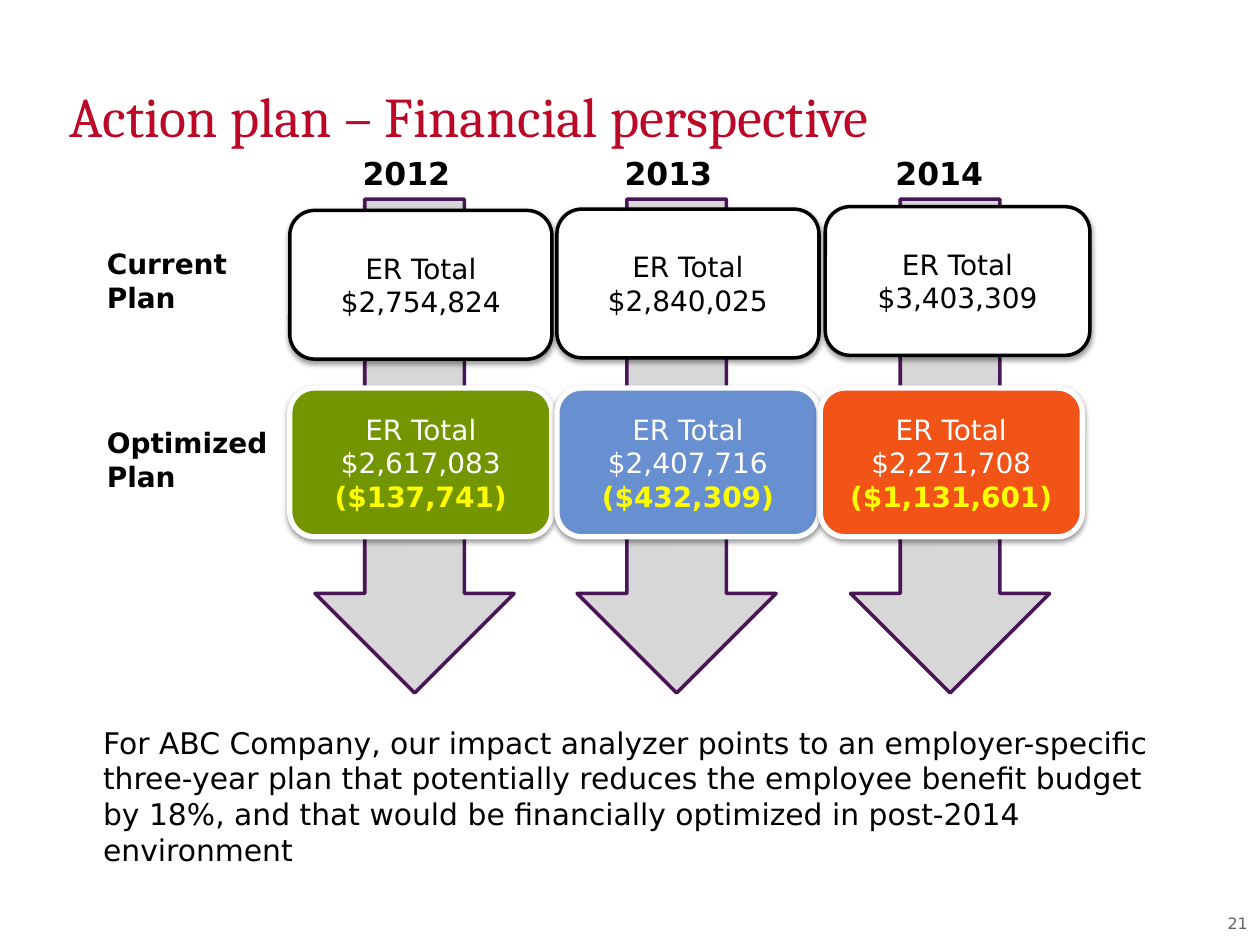
from dataclasses import dataclass

from lxml import etree
from pptx import Presentation
from pptx import util as u
from pptx.dml.color import RGBColor
from pptx.enum import shapes, text
from pptx.oxml.ns import qn


@dataclass(frozen=True)
class Theme:
    """Colours, fonts and type sizes of the deck."""
    heading_font: str = "Cambria"
    body_font: str = "DejaVu Sans"
    heading: str = "BB0826"
    ink: str = "000000"
    paper: str = "FFFFFF"
    saving: str = "FFFF00"
    muted: str = "626366"
    arrow: str = "D7D7D7"
    arrow_edge: str = "491557"
    title_size: int = 32
    year_size: int = 18
    summary_size: int = 17
    label_size: int = 16
    number_size: int = 9


THEME = Theme()
COLUMNS, ROWS = 100, 75
LEFT, CENTER, RIGHT = text.PP_ALIGN.LEFT, text.PP_ALIGN.CENTER, text.PP_ALIGN.RIGHT
TOP, MIDDLE = text.MSO_ANCHOR.TOP, text.MSO_ANCHOR.MIDDLE

YEARS = [
    dict(name="2012", year_at=24.7, arrow_at=25, current_at=(23, 16.7, 20.8),
         current="$2,754,824", optimized_at=23, optimized="$2,617,083",
         saving="($137,741)", color="739600"),
    dict(name="2013", year_at=45.5, arrow_at=45.8, current_at=(44.2, 16.6, 20.8),
         current="$2,840,025", optimized_at=44.2, optimized="$2,407,716",
         saving="($432,309)", color="688FCF"),
    dict(name="2014", year_at=67, arrow_at=67.5, current_at=(65.5, 16.4, 21),
         current="$3,403,309", optimized_at=65.1, optimized="$2,271,708",
         saving="($1,131,601)", color="F25316"),
]
ROW_LABELS = [("Current Plan", 19.1), ("Optimized Plan", 33.3)]
SUMMARY = (
    "For ABC Company, our impact analyzer points to an employer-specific "
    "three-year plan that potentially reduces the employee benefit budget "
    "by 18%, and that would be financially optimized in post-2014 environment"
)


def apply(target, values):
    """Set each named attribute on the target."""
    for name, value in values.items():
        setattr(target, name, value)


class PageBuilder:
    """Holds the theme and the current slide and draws elements on its grid."""

    def __init__(self, deck, theme):
        """Add a title-only slide and measure its grid."""
        self.theme = theme
        self.page = deck.slides.add_slide(deck.slide_layouts[5])
        self.cell_width = deck.slide_width / COLUMNS
        self.cell_height = deck.slide_height / ROWS

    def place(self, column, row, columns, rows):
        """Turn grid cells into left, top, width and height."""
        return (u.Emu(round(column * self.cell_width)), u.Emu(round(row * self.cell_height)),
                u.Emu(round(columns * self.cell_width)), u.Emu(round(rows * self.cell_height)))

    def fill_text(self, box, lines, size, align=LEFT, anchor=TOP, font=None, spacing=None):
        """Put lines of (words, colour, bold) into a box."""
        frame = box.text_frame
        apply(frame, dict(word_wrap=True, auto_size=text.MSO_AUTO_SIZE.NONE,
                          vertical_anchor=anchor))
        for index, (words, color, bold) in enumerate(lines):
            para = frame.add_paragraph() if index else frame.paragraphs[0]
            apply(para, dict(alignment=align, line_spacing=spacing))
            span = para.add_run()
            span.text = words
            apply(span.font, dict(name=font or self.theme.body_font,
                                  size=u.Pt(size), bold=bold))
            span.font.color.rgb = RGBColor.from_string(color)

    def title(self, cells, words):
        """Place and format the title placeholder."""
        box = self.page.shapes.title
        apply(box, dict(zip(("left", "top", "width", "height"), self.place(*cells))))
        self.fill_text(box, [(words, self.theme.heading, False)], self.theme.title_size,
                       font=self.theme.heading_font, spacing=1.05)

    def label(self, cells, words, size, color=None, bold=False, **layout):
        """Add a text box with a single paragraph."""
        box = self.page.shapes.add_textbox(*self.place(*cells))
        self.fill_text(box, [(words, color or self.theme.ink, bold)], size, **layout)

    def outline(self, kind, cells, fill, edge, weight):
        """Add a filled and outlined preset shape without a shadow."""
        shape = self.page.shapes.add_shape(kind, *self.place(*cells))
        shape.fill.solid()
        shape.fill.fore_color.rgb = RGBColor.from_string(fill)
        shape.line.color.rgb = RGBColor.from_string(edge)
        shape.line.width = u.Pt(weight)
        shape.shadow.inherit = False
        return shape

    def arrow(self, cells):
        """Add a block arrow pointing down."""
        self.outline(shapes.MSO_SHAPE.DOWN_ARROW, cells,
                     self.theme.arrow, self.theme.arrow_edge, 2)

    def card(self, cells, lines, fill, edge, weight):
        """Add a rounded card with centred lines and a soft shadow."""
        box = self.outline(shapes.MSO_SHAPE.ROUNDED_RECTANGLE, cells, fill, edge, weight)
        effects = box._element.spPr.find(qn("a:effectLst"))
        shadow = etree.SubElement(effects, qn("a:outerShdw"), blurRad=str(u.Pt(3.1)),
                                  dist=str(u.Pt(1.6)), dir="5400000", rotWithShape="0")
        color = etree.SubElement(shadow, qn("a:srgbClr"), val=self.theme.ink)
        etree.SubElement(color, qn("a:alpha"), val="38000")
        self.fill_text(box, lines, self.theme.label_size, CENTER, MIDDLE)


def main():
    """Build the financial perspective slide."""
    deck = Presentation()
    apply(deck, dict(slide_width=u.Inches(10), slide_height=u.Inches(7.5)))
    page = PageBuilder(deck, THEME)
    page.title((4.5, 5.7, 89.7, 10.5), "Action plan – Financial perspective")
    for year in YEARS:
        page.arrow((year["arrow_at"], 15.8, 15.8, 39.2))
        page.label((year["year_at"], 11.7, 15.1, 4), year["name"], THEME.year_size,
                   bold=True, align=CENTER)
    for year in YEARS:
        column, row, width = year["current_at"]
        page.card((column, row, width, 11.8),
                  [("ER Total", THEME.ink, False), (year["current"], THEME.ink, False)],
                  THEME.paper, THEME.ink, 2)
        page.card((year["optimized_at"], 30.8, 20.8, 11.8),
                  [("ER Total", THEME.paper, False), (year["optimized"], THEME.paper, False),
                   (year["saving"], THEME.saving, True)],
                  year["color"], THEME.paper, 3)
    for words, row in ROW_LABELS:
        page.label((7.5, row, 15.8, 6.4), words, THEME.label_size, bold=True)
    page.label((7.2, 57, 87.3, 12.5), SUMMARY, THEME.summary_size)
    page.label((96, 71.5, 4, 3.5), "21", THEME.number_size, THEME.muted,
               align=RIGHT, anchor=MIDDLE)
    deck.save("out.pptx")


if __name__ == "__main__":
    main()
